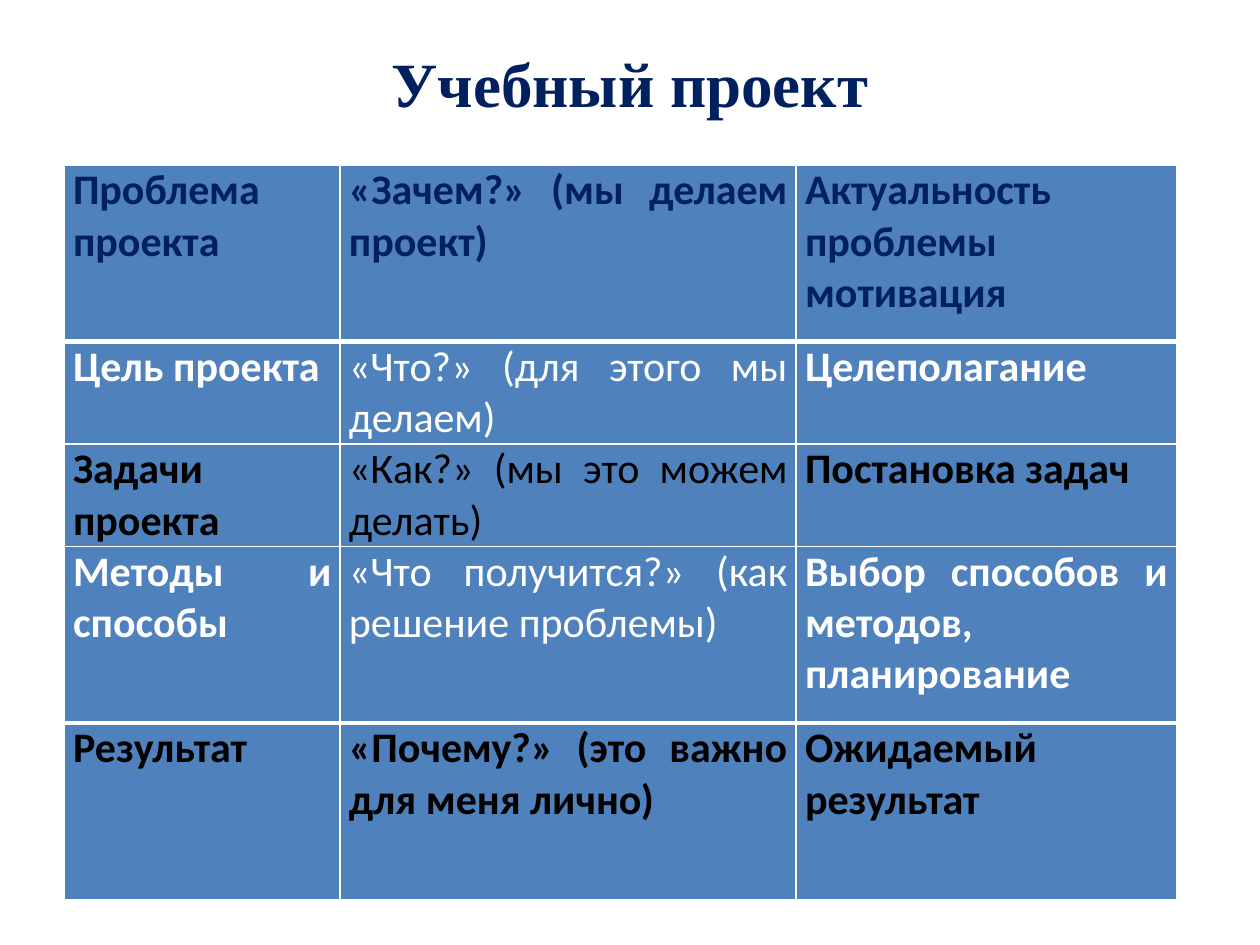
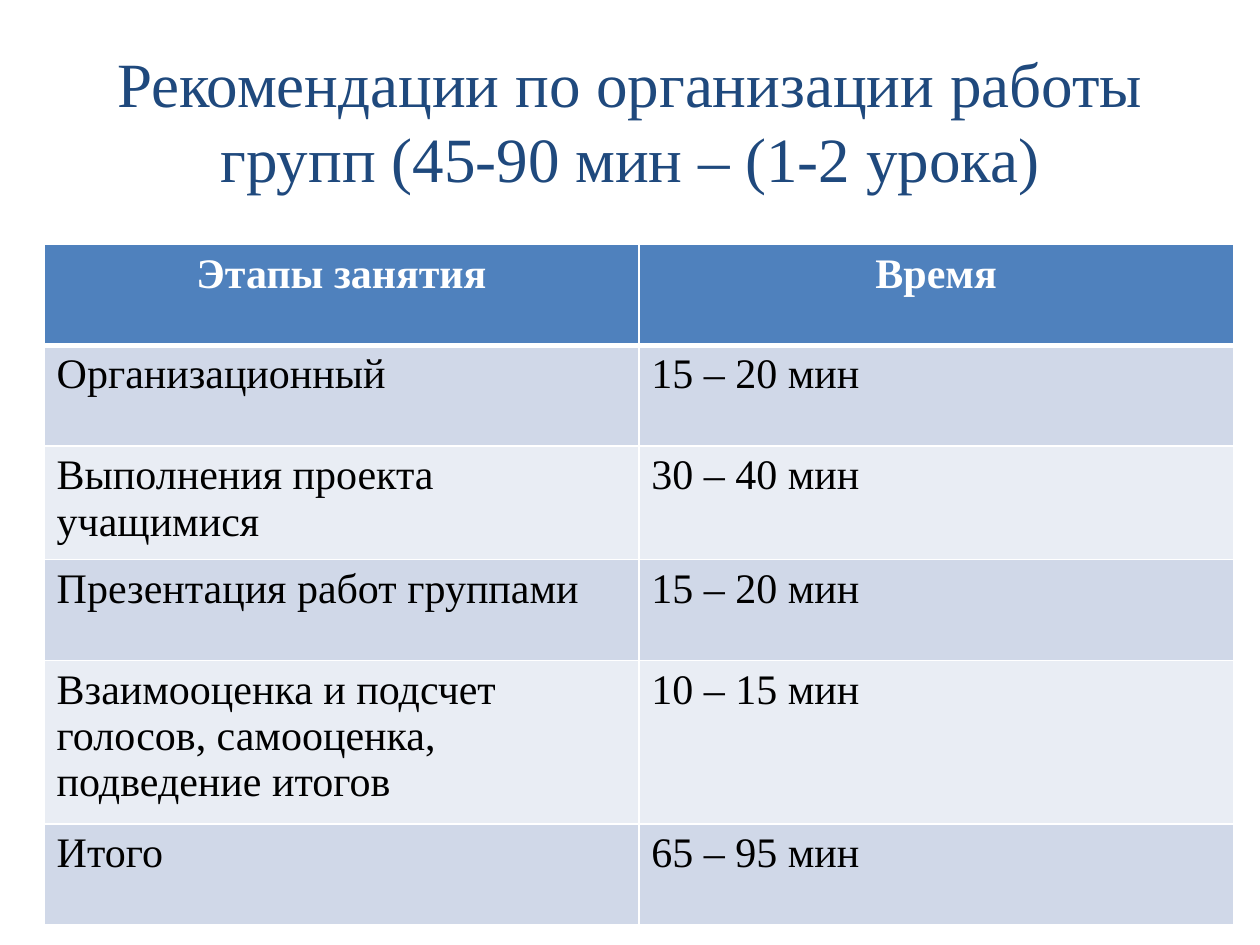
from pptx import Presentation
from pptx.dml.color import RGBColor
from pptx.enum.text import MSO_ANCHOR as Anchor, PP_ALIGN as Align
from pptx.oxml.ns import qn
from pptx.util import Inches, Pt
from lxml.etree import SubElement

COLORS = {
    "navy": "002060",
    "title": "1F497D",
    "blue": "4F81BD",
    "band_dark": "D0D8E8",
    "band_light": "E9EDF4",
    "white": "FFFFFF",
    "black": "000000",
}
SERIF, SANS = "Times New Roman", "Calibri"


class Deck:
    """Holds the shared style and the current slide."""

    def __init__(self):
        self.deck = Presentation()
        self.deck.slide_width = Inches(10)
        self.deck.slide_height = Inches(7.5)
        self.page = None

    def new_page(self):
        self.page = self.deck.slides.add_slide(self.deck.slide_layouts[6])

    def set_text(self, frame, text, size, font, color, bold=False,
                 align=Align.LEFT):
        frame.text = text
        para = frame.paragraphs[0]
        para.alignment = align
        for span in para.runs:
            span.font.size = Pt(size)
            span.font.name = font
            span.font.bold = bold
            span.font.color.rgb = RGBColor.from_string(COLORS[color])

    def title(self, text, color, bold=False):
        box = self.page.shapes.add_textbox(
            Inches(0.5), Inches(0.3), Inches(9), Inches(1.25))
        frame = box.text_frame
        frame.word_wrap = True
        frame.vertical_anchor = Anchor.TOP
        self.set_text(frame, text, 36, SERIF, color, bold, Align.CENTER)

    def table(self, left, top, widths, heights, thick_rules):
        """Add an empty table; thick_rules lists the rows with a heavy top line."""
        frame = self.page.shapes.add_table(
            len(heights), len(widths), Inches(left), Inches(top),
            Inches(sum(widths)), Inches(sum(heights)))
        grid = frame.table
        for column, width in zip(grid.columns, widths):
            column.width = Inches(width)
        for index, (row, height) in enumerate(zip(grid.rows, heights)):
            row.height = Inches(height)
            top_line = 3 if index in thick_rules else 1
            bottom_line = 3 if index + 1 in thick_rules else 1
            for cell in row.cells:
                self.borders(cell, L=1, R=1, T=top_line, B=bottom_line)
        return grid

    def borders(self, cell, **sides):
        properties = cell._tc.get_or_add_tcPr()
        for side, points in sides.items():
            line = SubElement(properties, qn(f"a:ln{side}"), w=str(Pt(points)))
            solid = SubElement(line, qn("a:solidFill"))
            SubElement(solid, qn("a:srgbClr"), val=COLORS["white"])

    def cell(self, cell, text, fill, **style):
        cell.fill.solid()
        cell.fill.fore_color.rgb = RGBColor.from_string(COLORS[fill])
        self.set_text(cell.text_frame, text, 24, **style)

    def save(self):
        self.deck.save("out.pptx")


def project_page(deck):
    deck.new_page()
    # Table: text colour, bold middle column, three texts
    rows = [
        ("navy", True, "Проблема проекта", "«Зачем?» (мы делаем проект)",
         "Актуальность проблемы мотивация"),
        ("white", False, "Цель проекта", "«Что?» (для этого мы делаем)",
         "Целеполагание"),
        ("black", False, "Задачи проекта", "«Как?» (мы это можем делать)",
         "Постановка задач"),
        ("white", False, "Методы и способы",
         "«Что получится?» (как решение проблемы)",
         "Выбор способов и методов, планирование"),
        ("black", True, "Результат", "«Почему?» (это важно для меня лично)",
         "Ожидаемый результат"),
    ]
    grid = deck.table(0.51, 1.31, [2.19, 3.62, 3.02],
                      [1.4, 0.7, 0.7, 1.4, 1.4], {1, 4})
    for row, (color, bold_middle, *texts) in zip(grid.rows, rows):
        for index, (cell, text) in enumerate(zip(row.cells, texts)):
            cell.margin_left = cell.margin_right = Inches(0.07)
            cell.margin_top = cell.margin_bottom = 0
            deck.cell(cell, text, "blue", font=SANS, color=color,
                      bold=bold_middle or index != 1, align=Align.JUSTIFY)
    # Title
    deck.title("Учебный проект", "navy", bold=True)


def schedule_page(deck):
    deck.new_page()
    # Title
    deck.title("Рекомендации по организации работы групп "
               "(45-90 мин – (1-2 урока)", "title")
    # Table: header row, then alternating bands
    rows = [
        ("Этапы занятия", "Время"),
        ("Организационный", "15 – 20 мин"),
        ("Выполнения проекта учащимися", "30 – 40 мин"),
        ("Презентация работ группами", "15 – 20 мин"),
        ("Взаимооценка и подсчет голосов, самооценка, подведение итогов",
         "10 – 15 мин"),
        ("Итого", "65 – 95 мин"),
    ]
    header = dict(fill="blue", color="white", bold=True, align=Align.CENTER)
    bands = [dict(fill="band_light", color="black"),
             dict(fill="band_dark", color="black")]
    grid = deck.table(0.35, 1.94, [4.72] * 2, [0.8] * len(rows), {1})
    for index, (row, texts) in enumerate(zip(grid.rows, rows)):
        style = bands[index % 2] if index else header
        for cell, text in zip(row.cells, texts):
            deck.cell(cell, text, font=SERIF, **style)


def main():
    deck = Deck()
    project_page(deck)
    schedule_page(deck)
    deck.save()


if __name__ == "__main__":
    main()
